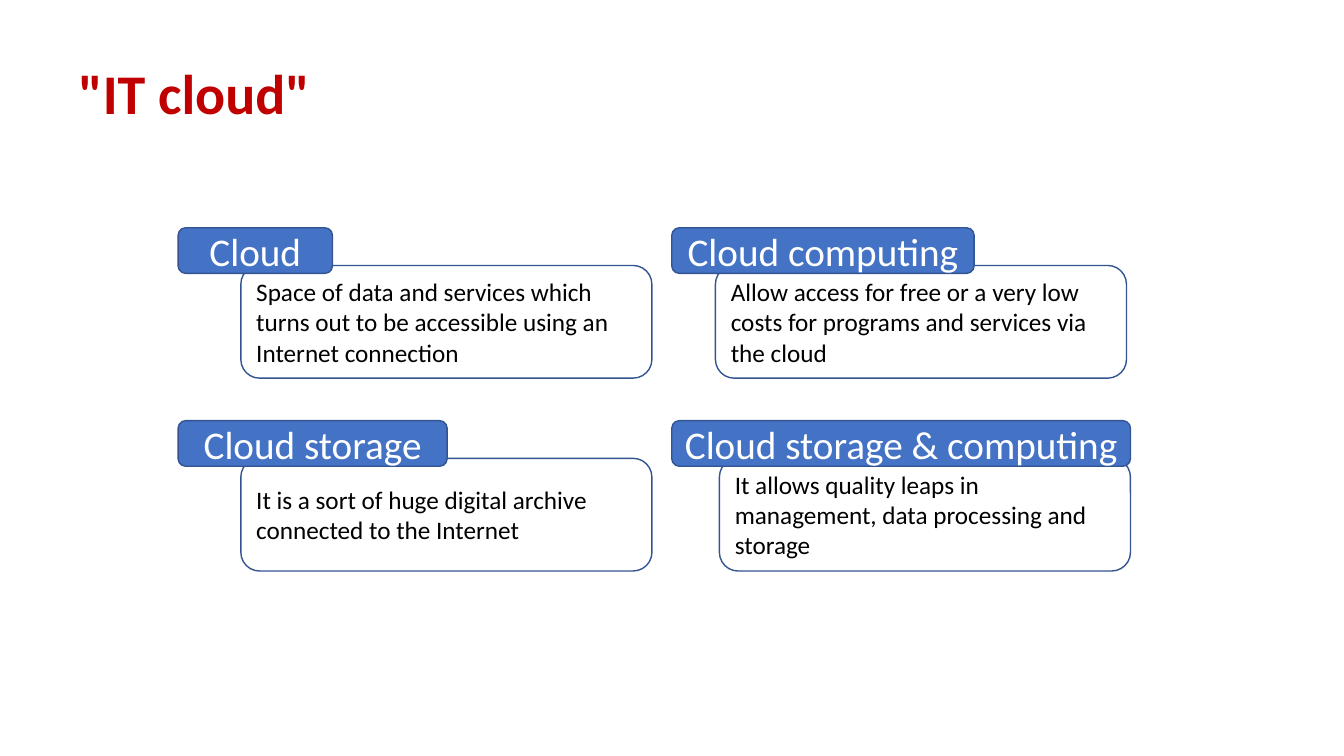
from dataclasses import dataclass

from pptx import Presentation
from pptx.dml.color import RGBColor
from pptx.enum.shapes import MSO_SHAPE
from pptx.enum.text import MSO_ANCHOR, PP_ALIGN
from pptx.util import Cm, Pt

ROUNDED = MSO_SHAPE.ROUNDED_RECTANGLE
LEFT, CENTER = PP_ALIGN.LEFT, PP_ALIGN.CENTER
TOP, MIDDLE = MSO_ANCHOR.TOP, MSO_ANCHOR.MIDDLE

TITLE = '"IT cloud"'
# (label, label width in cm, description, description indent in cm)
CARDS = [
    ("Cloud", 3.89,
     "Space of data and services which turns out to be accessible "
     "using an Internet connection", 1.58),
    ("Cloud computing", 7.62,
     "Allow access for free or a very low costs for programs and services "
     "via the cloud", 1.1),
    ("Cloud storage", 6.78,
     "It is a sort of huge digital archive connected to the Internet", 1.58),
    ("Cloud storage & computing", 11.56,
     "It allows quality leaps in management, data processing and storage", 1.2),
]


@dataclass(frozen=True)
class Theme:
    font: str = "Calibri"
    title: RGBColor = RGBColor(0xC0, 0x00, 0x00)
    label_fill: RGBColor = RGBColor(0x44, 0x72, 0xC4)
    outline: RGBColor = RGBColor(0x32, 0x54, 0x91)
    label_text: RGBColor = RGBColor(0xFF, 0xFF, 0xFF)
    body_text: RGBColor = RGBColor(0x00, 0x00, 0x00)
    title_size: Pt = Pt(40)
    label_size: Pt = Pt(28)
    body_size: Pt = Pt(18)
    line_width: Pt = Pt(1)


THEME = Theme()
GRID_LEFT, GRID_TOP = 4.49, 5.74
COLUMN_STEP, ROW_STEP = 12.44, 4.86
LABEL_HEIGHT = 1.15
BOX_WIDTH, BOX_HEIGHT, BOX_DROP = 10.36, 2.84, 0.95


def write(shape, text, size, color, align, anchor, bold=False):
    tf = shape.text_frame
    tf.word_wrap = True
    tf.vertical_anchor = anchor
    p = tf.paragraphs[0]
    p.text = text
    p.alignment = align
    p.font.name = THEME.font
    p.font.size = size
    p.font.bold = bold
    p.font.color.rgb = color


def add_rounded(s, left, top, width, height):
    sp = s.shapes.add_shape(ROUNDED, Cm(left), Cm(top), Cm(width), Cm(height))
    sp.shadow.inherit = False
    sp.line.color.rgb = THEME.outline
    sp.line.width = THEME.line_width
    return sp


def add_label(s, left, top, width, text):
    sp = add_rounded(s, left, top, width, LABEL_HEIGHT)
    sp.fill.solid()
    sp.fill.fore_color.rgb = THEME.label_fill
    write(sp, text, THEME.label_size, THEME.label_text, CENTER, MIDDLE)


def add_description(s, left, top, text):
    sp = add_rounded(s, left, top, BOX_WIDTH, BOX_HEIGHT)
    sp.fill.background()
    write(sp, text, THEME.body_size, THEME.body_text, LEFT, MIDDLE)


def main():
    prs = Presentation()
    prs.slide_width, prs.slide_height = Cm(33.87), Cm(19.05)
    s = prs.slides.add_slide(prs.slide_layouts[5])

    title = s.shapes.title
    title.left, title.top = Cm(1.72), Cm(1.35)
    title.width, title.height = Cm(16.92), Cm(1.96)
    write(title, TITLE, THEME.title_size, THEME.title, LEFT, TOP, bold=True)

    for i, (label, width, description, indent) in enumerate(CARDS):
        row, column = divmod(i, 2)
        left = GRID_LEFT + column * COLUMN_STEP
        top = GRID_TOP + row * ROW_STEP
        add_description(s, left + indent, top + BOX_DROP, description)
        add_label(s, left, top, width, label)

    prs.save("out.pptx")


if __name__ == "__main__":
    main()
